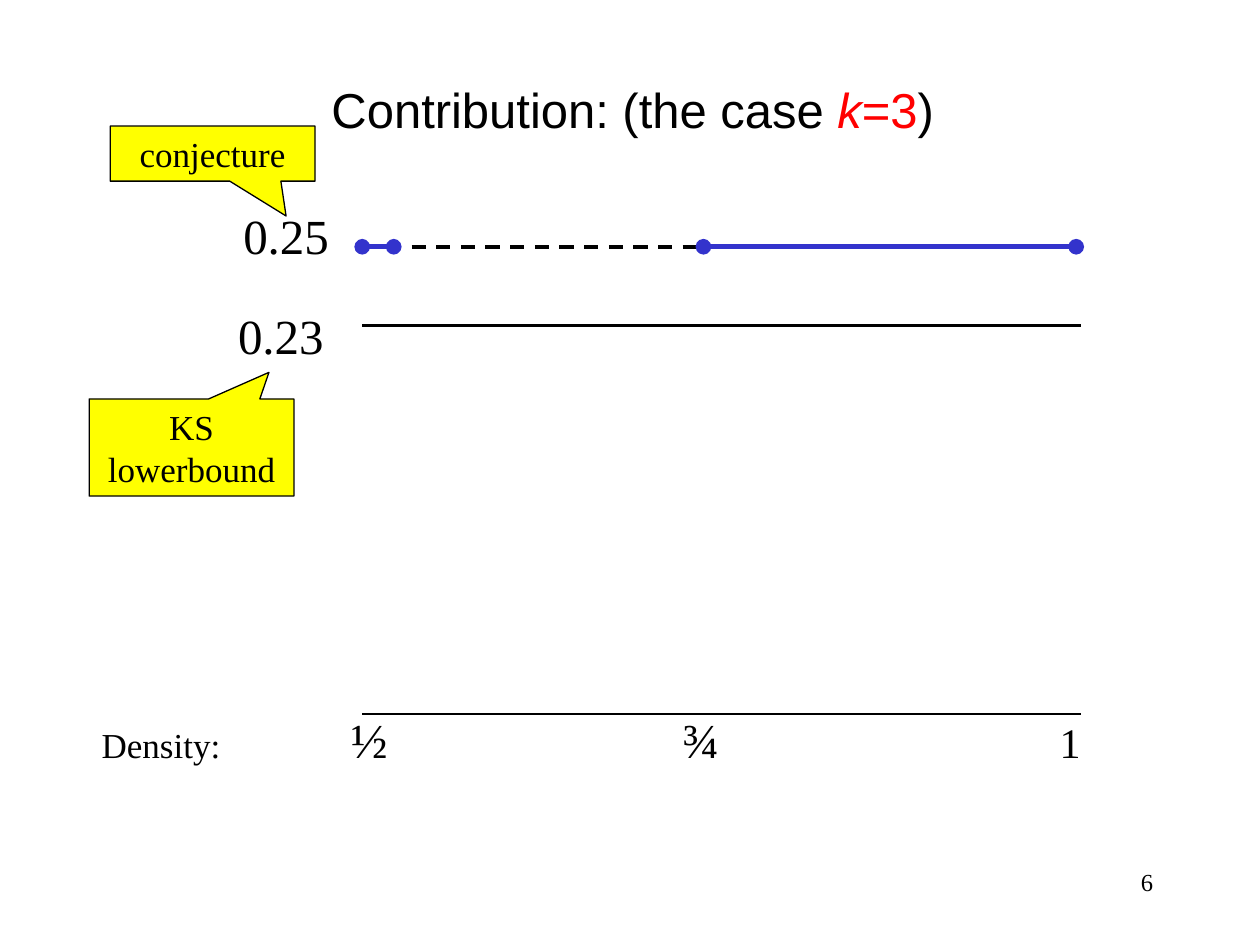
from lxml import etree
from pptx import Presentation
from pptx.dml.color import RGBColor
from pptx.enum.dml import MSO_LINE
from pptx.enum.shapes import MSO_CONNECTOR, MSO_SHAPE
from pptx.enum.text import MSO_ANCHOR, MSO_AUTO_SIZE, PP_ALIGN
from pptx.oxml.ns import qn
from pptx.util import Pt

BLACK = RGBColor(0x00, 0x00, 0x00)
RED = RGBColor(0xFF, 0x00, 0x00)
BLUE = RGBColor(0x33, 0x33, 0xCC)
YELLOW = RGBColor(0xFF, 0xFF, 0x00)
SERIF, SANS = "Times New Roman", "Arial"
LEFT, CENTER, RIGHT = PP_ALIGN.LEFT, PP_ALIGN.CENTER, PP_ALIGN.RIGHT
DASH = MSO_LINE.DASH
STRAIGHT = MSO_CONNECTOR.STRAIGHT
CALLOUT = MSO_SHAPE.RECTANGULAR_CALLOUT
TOP = MSO_ANCHOR.TOP
GROW = MSO_AUTO_SIZE.SHAPE_TO_FIT_TEXT

# Chart frame
X_START, X_END = 207, 618
Y_CONJECTURE, Y_BOUND, Y_AXIS = 141, 186, 408


def add_run(p, text, size, font=SERIF, color=BLACK, italic=False):
    r = p.add_run()
    r.text = text
    r.font.size = Pt(size)
    r.font.name = font
    r.font.color.rgb = color
    r.font.italic = italic


def start_text(sp, align):
    """Prepare a shape's text frame and return its first paragraph."""
    tf = sp.text_frame
    tf.word_wrap = True
    tf.auto_size = GROW
    tf.vertical_anchor = TOP
    p = tf.paragraphs[0]
    p.alignment = align
    # Half a line of space before
    before = etree.SubElement(p._p.get_or_add_pPr(), qn("a:spcBef"))
    etree.SubElement(before, qn("a:spcPct"), val="50000")
    return p


def add_text(s, x, y, w, h, align=CENTER):
    return start_text(s.shapes.add_textbox(Pt(x), Pt(y), Pt(w), Pt(h)), align)


def add_tabs(p, stops):
    tabs = etree.SubElement(p._p.get_or_add_pPr(), qn("a:tabLst"))
    for stop in stops:
        etree.SubElement(tabs, qn("a:tab"), pos=str(Pt(stop)), algn="l")


def add_line(s, x1, x2, y, width, color=BLACK, dash=None, dots=False):
    line = s.shapes.add_connector(STRAIGHT, Pt(x1), Pt(y), Pt(x2), Pt(y))
    line.line.color.rgb = color
    line.line.width = Pt(width)
    if dash:
        line.line.dash_style = dash
    if dots:
        for end in ("a:headEnd", "a:tailEnd"):
            etree.SubElement(line.line._get_or_add_ln(), qn(end), type="oval")
    etree.SubElement(line._element.spPr, qn("a:effectLst"))


def add_callout(s, text, x, y, h, tip):
    sp = s.shapes.add_shape(CALLOUT, Pt(x), Pt(y), Pt(117), Pt(h))
    sp.shadow.inherit = False
    sp.adjustments[0], sp.adjustments[1] = tip
    sp.fill.solid()
    sp.fill.fore_color.rgb = YELLOW
    sp.line.color.rgb = BLACK
    sp.line.width = Pt(0.75)
    add_run(start_text(sp, CENTER), text, 20)


def main():
    prs = Presentation()
    prs.slide_width, prs.slide_height = Pt(720), Pt(540)
    s = prs.slides.add_slide(prs.slide_layouts[6])

    # Page number
    add_run(add_text(s, 516, 492, 150, 36, RIGHT), "6", 14)

    # Title
    p = add_text(s, 81, 42, 561, 41)
    add_run(p, "Contribution: (the case ", 28, SANS)
    add_run(p, "k", 28, SANS, RED, italic=True)
    add_run(p, "=3", 28, SANS, RED)
    add_run(p, ")", 28, SANS)

    # Conjectured value, lower bound and density axis
    add_line(s, X_START, X_END, Y_CONJECTURE, 2, dash=DASH)
    add_line(s, X_START, X_END, Y_BOUND, 1.75)
    add_line(s, X_START, X_END, Y_AXIS, 0.75)

    # Proven ranges
    for x1, x2 in ((X_START, 225), (402, 615)):
        add_line(s, x1, x2, Y_CONJECTURE, 3, BLUE, dots=True)

    # Density labels
    p = add_text(s, 51, 402, 579, 41, LEFT)
    add_tabs(p, (142.5, 332, 547.5))
    add_run(p, "Density:", 20)
    add_run(p, "\t½\t¾\t", 28)
    add_run(p, "1", 24)

    # Value labels
    for text, x, y in (("0.25", 126, 114), ("0.23", 123, 171)):
        add_run(add_text(s, x, y, 75, 41), text, 28)

    # Callouts
    add_callout(s, "conjecture", 63, 72, 31.5, (0.359, 1.133))
    add_callout(s, "KS lowerbound", 51, 228, 55.5, (0.378, -0.774))

    prs.save("out.pptx")


if __name__ == "__main__":
    main()
